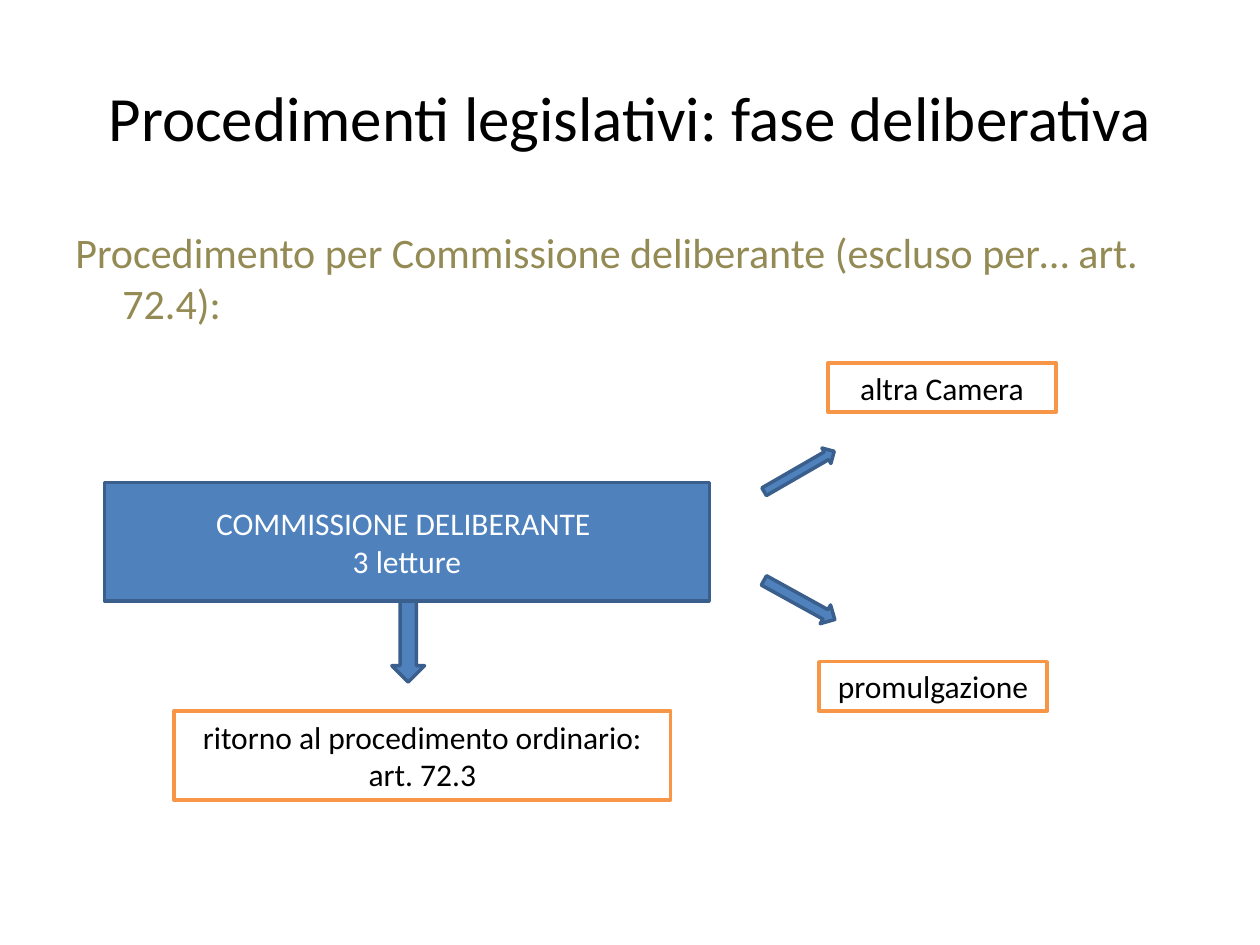
from pptx import Presentation
from pptx.dml.color import RGBColor
from pptx.enum.shapes import MSO_SHAPE
from pptx.enum.text import MSO_ANCHOR, PP_ALIGN
from pptx.util import Cm, Pt

COLORS = {"black": "000000", "white": "FFFFFF", "olive": "948A54",
          "blue": "4F81BD", "navy": "3A5F8C", "orange": "F79646"}

TITLE = "Procedimenti legislativi: fase deliberativa"
SUBTITLE = "Procedimento per Commissione deliberante (escluso per… art. 72.4):"
COMMITTEE = ["COMMISSIONE DELIBERANTE ", "3 letture"]
OUTCOMES = [
    ("altra Camera", (16.69, 7.32, 4.6, 0.99)),
    ("promulgazione", (16.51, 13.34, 4.6, 0.99)),
    ("ritorno al procedimento ordinario: art. 72.3", (3.51, 14.33, 10.01, 1.8)),
]
ARROWS = [
    ((15.93, 8.69, 0.36, 1.63), 240),
    ((15.9, 11.28, 0.43, 1.63), 298.9),
    ((7.9, 12.12, 0.66, 1.63), 0),
]


def rgb(name):
    return RGBColor.from_string(COLORS[name])


def write(sp, lines, size=18, color="black", align=PP_ALIGN.CENTER,
          anchor=MSO_ANCHOR.MIDDLE, hanging=0, before=0):
    tf = sp.text_frame
    tf.word_wrap = True
    tf.vertical_anchor = anchor
    for i, line in enumerate(lines):
        p = tf.add_paragraph() if i else tf.paragraphs[0]
        p.alignment = align
        p.space_before = Pt(before)
        if hanging:
            pPr = p._p.get_or_add_pPr()
            pPr.set("marL", str(Cm(hanging)))
            pPr.set("indent", str(-Cm(hanging)))
        r = p.add_run()
        r.text = line
        r.font.name = "Calibri"
        r.font.size = Pt(size)
        r.font.color.rgb = rgb(color)


def add_shape(s, kind, box, fill="blue", line="navy"):
    sp = s.shapes.add_shape(kind, *map(Cm, box))
    sp.shadow.inherit = False
    sp.fill.solid()
    sp.fill.fore_color.rgb = rgb(fill)
    sp.line.color.rgb = rgb(line)
    sp.line.width = Pt(2)
    return sp


def main():
    prs = Presentation()
    prs.slide_width, prs.slide_height = Cm(25.4), Cm(19.05)
    s = prs.slides.add_slide(prs.slide_layouts[6])

    write(s.shapes.add_textbox(*map(Cm, (1.27, 0.76, 22.86, 3.18))), [TITLE], size=36)
    write(s.shapes.add_textbox(*map(Cm, (1.27, 4.45, 22.86, 12.57))), [SUBTITLE],
          size=24, color="olive", align=PP_ALIGN.LEFT, anchor=MSO_ANCHOR.TOP,
          hanging=0.95, before=4.8)

    write(add_shape(s, MSO_SHAPE.RECTANGLE, (2.11, 9.73, 12.19, 2.39)),
          COMMITTEE, color="white")
    for text, box in OUTCOMES:
        write(add_shape(s, MSO_SHAPE.RECTANGLE, box, "white", "orange"), [text])
    for box, angle in ARROWS:
        add_shape(s, MSO_SHAPE.DOWN_ARROW, box).rotation = angle

    prs.save("out.pptx")


if __name__ == "__main__":
    main()
